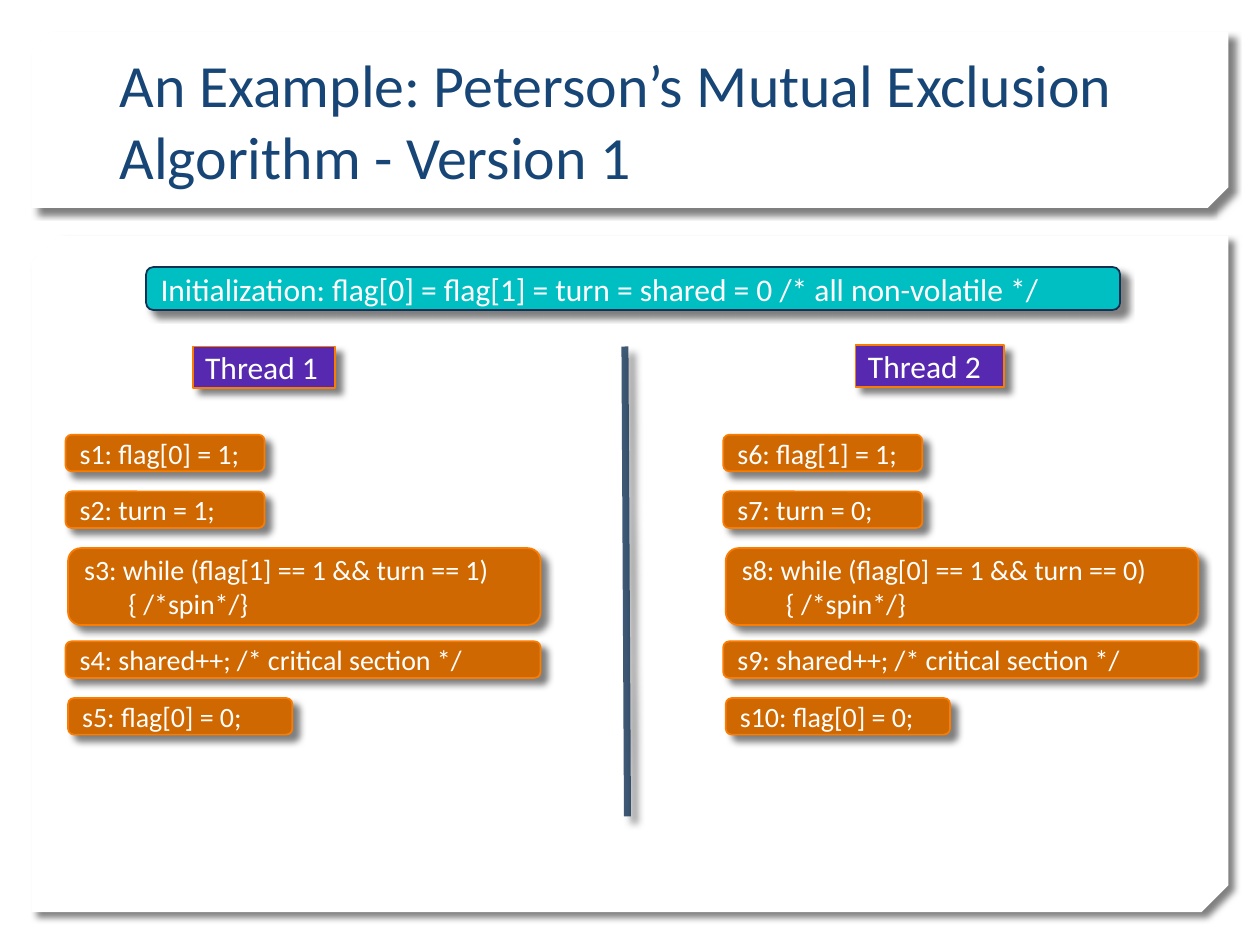
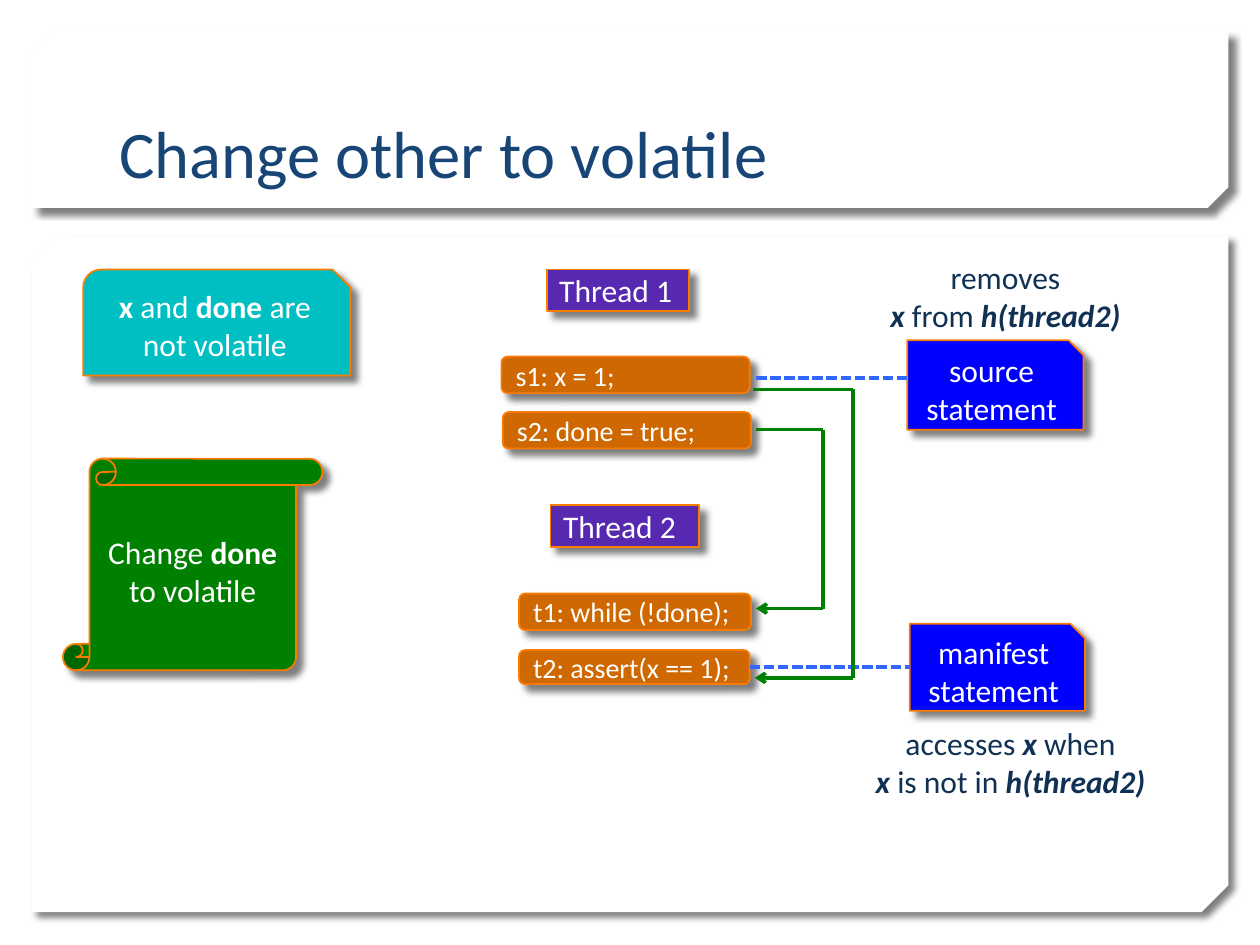
from itertools import pairwise

from lxml import etree
from pptx import Presentation
from pptx.dml.color import RGBColor
from pptx.enum.dml import MSO_LINE
from pptx.enum.shapes import MSO_CONNECTOR, MSO_SHAPE
from pptx.enum.text import MSO_ANCHOR, PP_ALIGN
from pptx.oxml.ns import qn
from pptx.util import Inches, Pt

RECT = MSO_SHAPE.RECTANGLE
ROUND = MSO_SHAPE.ROUNDED_RECTANGLE
SNIP = MSO_SHAPE.SNIP_1_RECTANGLE
SNIP_ROUND = MSO_SHAPE.SNIP_ROUND_RECTANGLE
SNIP_DIAG = MSO_SHAPE.SNIP_2_DIAG_RECTANGLE
SCROLL = MSO_SHAPE.VERTICAL_SCROLL
STRAIGHT = MSO_CONNECTOR.STRAIGHT
DASHED = MSO_LINE.SQUARE_DOT
LEFT, CENTER = PP_ALIGN.LEFT, PP_ALIGN.CENTER
TOP, MIDDLE, BOTTOM = MSO_ANCHOR.TOP, MSO_ANCHOR.MIDDLE, MSO_ANCHOR.BOTTOM
LEFT_SIDE, RIGHT_SIDE = 1, 3

FONT = "Calibri"
COLORS = {
    "white": "FFFFFF",
    "title": "174576",
    "navy": "103154",
    "teal": "00BFC3",
    "statement": "D06801",
    "outline": "FA7C00",
    "thread": "5729B1",
    "role": "0000FF",
    "link": "3366FF",
    "green": "008000",
    "shadow": "000000",
}
THREAD_SIZES = {"Thread 1": (1.13, 0.33), "Thread 2": (1.18, 0.33)}


def rgb(name):
    return RGBColor.from_string(COLORS[name])


# Shared drawing helpers
def add_effects(shape, shadow=True):
    effects = etree.SubElement(shape._element.spPr, qn("a:effectLst"))
    if shadow:
        outer = etree.SubElement(effects, qn("a:outerShdw"), blurRad=str(Pt(4)),
                                 dist=str(Pt(5)), dir=str(45 * 60000),
                                 algn="tl", rotWithShape="0")
        color = etree.SubElement(outer, qn("a:srgbClr"), val=COLORS["shadow"])
        etree.SubElement(color, qn("a:alpha"), val="50000")


def write(shape, paragraphs, size, color="white", align=LEFT, anchor=MIDDLE, wrap=True):
    """Each paragraph is a string or a list of (text, style), style from 'b' and 'i'."""
    tf = shape.text_frame
    tf.word_wrap = wrap
    tf.vertical_anchor = anchor
    for i, runs in enumerate(paragraphs):
        p = tf.add_paragraph() if i else tf.paragraphs[0]
        p.alignment = align
        p.font.name = FONT
        p.font.size = Pt(size)
        p.font.color.rgb = rgb(color)
        for text, style in [(runs, "")] if isinstance(runs, str) else runs:
            r = p.add_run()
            r.text = text
            if "b" in style:
                r.font.bold = True
            if "i" in style:
                r.font.italic = True


def add_box(s, kind, box, fill, line=None):
    sp = s.shapes.add_shape(kind, *map(Inches, box))
    sp.fill.solid()
    sp.fill.fore_color.rgb = rgb(fill)
    if line:
        sp.line.color.rgb = rgb(line)
        sp.line.width = Pt(1)
    else:
        sp.line.fill.background()
    sp.shadow.inherit = False
    sp._element.spPr.remove(sp._element.spPr.find(qn("a:effectLst")))
    add_effects(sp)
    return sp


def add_line(s, start, end, color, width, shadow=False):
    line = s.shapes.add_connector(STRAIGHT, *map(Inches, (*start, *end)))
    line.line.color.rgb = rgb(color)
    line.line.width = Pt(width)
    add_effects(line, shadow)
    return line


def add_note(s, box, paragraphs):
    tb = s.shapes.add_textbox(*map(Inches, box))
    write(tb, paragraphs, 18, "navy", CENTER, TOP, wrap=False)


def add_statement(s, box, *lines):
    sp = add_box(s, ROUND, box, "statement", "outline")
    write(sp, lines, 16)
    for p in sp.text_frame.paragraphs[1:]:
        p._p.get_or_add_pPr().set("marL", str(Inches(0.35)))
    return sp


def add_thread_label(s, left, top, text):
    sp = add_box(s, RECT, (left, top, *THREAD_SIZES[text]), "thread", "outline")
    write(sp, [text], 18)


# Panels and title of every slide
def add_frame(prs, title, size):
    s = prs.slides.add_slide(prs.slide_layouts[6])
    for top, height, snip in [(1.87, 5.37, 0.04), (0.25, 1.4, 0.117)]:
        panel = add_box(s, SNIP_DIAG, (0.25, top, 9.5, height), "white")
        panel.adjustments[0] = snip
        panel.adjustments[1] = 0
    tb = s.shapes.add_textbox(*map(Inches, (0.85, 0.32, 8.29, 1.25)))
    write(tb, [title], size, "title", anchor=BOTTOM)
    return s


# One thread's label and its five statements
def thread_column(s, left, top, label, label_left, label_top, statements):
    add_thread_label(s, left + label_left, label_top, label)
    places = [(0, 0, 1.58, 0.29), (0, 0.45, 1.58, 0.29), (0.02, 0.9, 3.75, 0.61),
              (0, 1.64, 3.77, 0.29), (0.02, 2.09, 1.78, 0.29)]
    for (dx, dy, width, height), lines in zip(places, statements):
        add_statement(s, (left + dx, top + dy, width, height), *lines)


def peterson_slide(prs):
    s = add_frame(prs, "An Example: Peterson’s Mutual Exclusion Algorithm - Version 1", 34.2)
    init = add_box(s, ROUND, (1.16, 2.12, 7.73, 0.34), "teal", "navy")
    write(init, ["Initialization: flag[0] = flag[1] = turn = shared = 0 /* all non-volatile */"], 18)

    thread_column(s, 0.52, 3.45, "Thread 1", 1.01, 2.75, [
        ["s1: flag[0] = 1;"],
        ["s2: turn = 1;"],
        ["s3: while (flag[1] == 1 && turn == 1)", "{ /*spin*/}"],
        ["s4: shared++; /* critical section */"],
        ["s5: flag[0] = 0;"],
    ])
    thread_column(s, 5.74, 3.45, "Thread 2", 1.05, 2.74, [
        ["s6: flag[1] = 1;"],
        ["s7: turn = 0;"],
        ["s8: while (flag[0] == 1 && turn == 0)", "{ /*spin*/}"],
        ["s9: shared++; /* critical section */"],
        ["s10: flag[0] = 0;"],
    ])

    # Divider between the threads
    divider = add_line(s, (4.96, 2.75), (4.98, 6.48), "navy", 4, shadow=True)
    color = divider.line._ln.find(".//" + qn("a:srgbClr"))
    etree.SubElement(color, qn("a:alpha"), val="80000")


# Arrow that leaves a statement, runs down and comes back to a later one
def flow_arrow(s, start, turn_x, end):
    points = [start, (turn_x, start[1]), (turn_x, end[1]), end]
    for a, b in pairwise(points):
        line = add_line(s, a, b, "green", 2)
    etree.SubElement(line.line._ln, qn("a:tailEnd"), type="arrow")


# Panels on the left that state the change
def change_panels(s, left, top):
    state = add_box(s, SNIP_ROUND, (left + 0.16, top, 2.12, 0.84), "teal", "outline")
    write(state, [[("x", "b"), (" and ", ""), ("done", "b"), (" are", "")],
                  "not volatile"], 18, align=CENTER)
    change = add_box(s, SCROLL, (left, top + 1.5, 2.06, 1.68), "green", "outline")
    write(change, [[("Change ", ""), ("done", "b"), (" to volatile", "")]], 18, align=CENTER)


def volatile_slide(prs):
    s = add_frame(prs, "Change other to volatile", 38)
    change_panels(s, 0.5, 2.14)

    # Threads and statements
    add_thread_label(s, 4.34, 2.14, "Thread 1")
    add_statement(s, (3.98, 2.83, 1.97, 0.29), "s1: x = 1;")
    add_statement(s, (3.99, 3.27, 1.97, 0.29), "s2: done = true;")
    add_thread_label(s, 4.37, 4.01, "Thread 2")
    add_statement(s, (4.12, 4.71, 1.84, 0.29), "t1: while (!done);")
    check = add_statement(s, (4.12, 5.16, 1.83, 0.27), "t2: assert(x == 1);")

    # Roles of the statements
    source = add_box(s, SNIP, (7.2, 2.7, 1.4, 0.71), "role", "outline")
    write(source, ["source", "statement"], 18, align=CENTER)
    manifest = add_box(s, SNIP, (7.22, 4.95, 1.39, 0.69), "role", "outline")
    write(manifest, ["manifest statement"], 18, align=CENTER)
    add_note(s, (6.91, 2, 2.14, 0.71), [
        "removes", [("x", "bi"), (" from ", ""), ("h(thread2)", "bi")]])
    add_note(s, (6.8, 5.7, 2.44, 0.71), [
        [("accesses ", ""), ("x", "bi"), (" when", "")],
        [("x", "bi"), (" is not in ", ""), ("h(thread2)", "bi")]])

    # Dashed links from statements to roles
    source_link = add_line(s, (6, 3), (7.2, 3), "link", 2)
    manifest_link = add_line(s, (5.95, 5.3), (7.22, 5.3), "link", 2)
    manifest_link.begin_connect(check, RIGHT_SIDE)
    manifest_link.end_connect(manifest, LEFT_SIDE)
    for link in (source_link, manifest_link):
        link.line.dash_style = DASHED

    # Value flow from thread 1 to thread 2
    flow_arrow(s, (6, 3.41), 6.53, (6, 4.83))
    flow_arrow(s, (5.98, 3.09), 6.77, (5.99, 5.38))


def main():
    prs = Presentation()
    prs.slide_width = Inches(10)
    prs.slide_height = Inches(7.5)
    peterson_slide(prs)
    volatile_slide(prs)
    prs.save("out.pptx")


if __name__ == "__main__":
    main()
